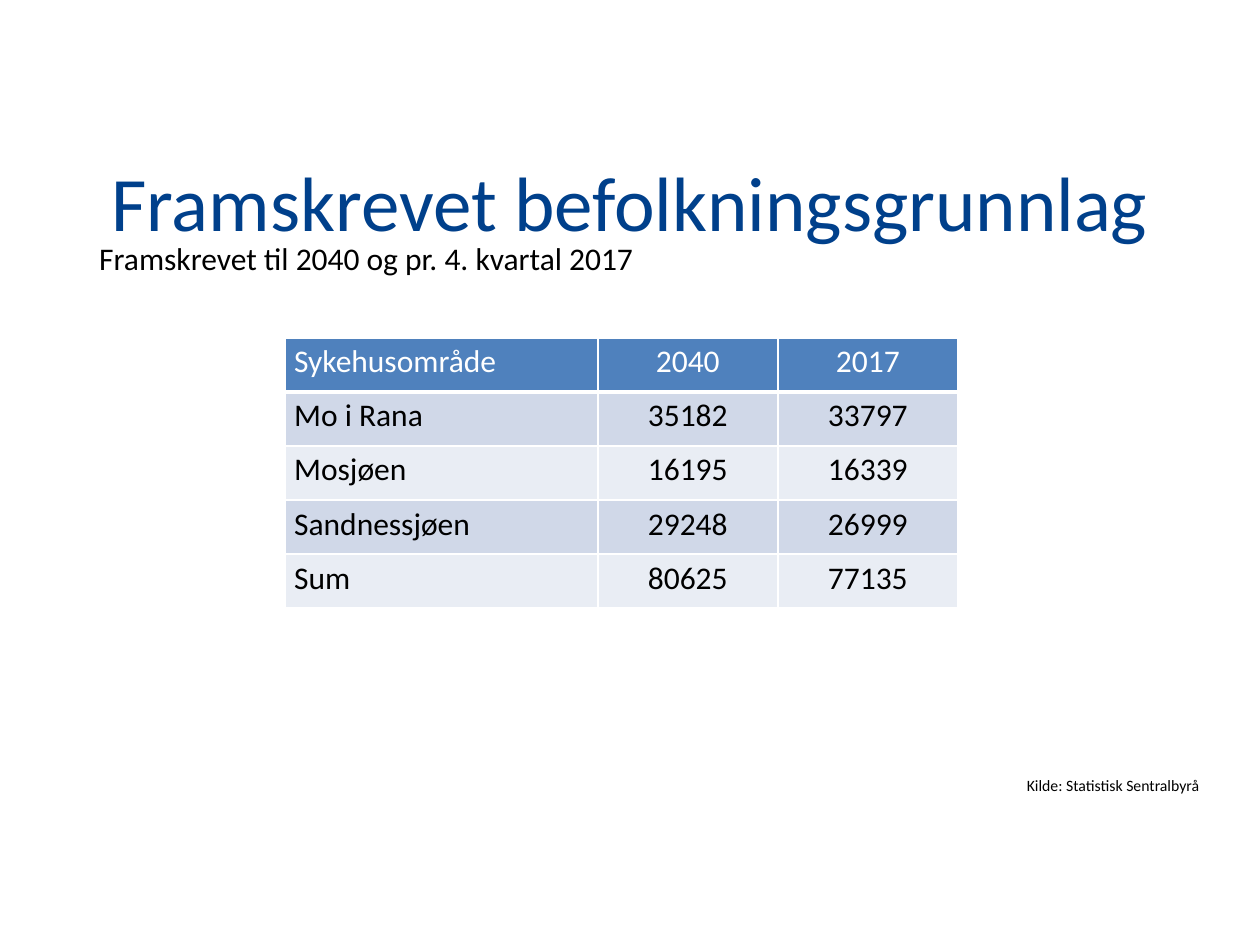
"""Build a slide with a table of projected population per hospital area."""
from pptx import Presentation
from pptx import util as u
from pptx.dml.color import RGBColor
from pptx.enum import text
from pptx.oxml import parse_xml
from pptx.oxml.ns import nsdecls

NAVY = RGBColor(0x00, 0x40, 0x8B)
BLUE = RGBColor(0x4F, 0x81, 0xBD)
BANDS = RGBColor(0xE9, 0xED, 0xF4), RGBColor(0xD0, 0xD8, 0xE8)
WHITE = RGBColor(0xFF, 0xFF, 0xFF)
BLACK = RGBColor(0x00, 0x00, 0x00)
FONT = "Calibri"
ROWS = [
    ("Sykehusområde", "2040", "2017"),
    ("Mo i Rana", "35182", "33797"),
    ("Mosjøen", "16195", "16339"),
    ("Sandnessjøen", "29248", "26999"),
    ("Sum", "80625", "77135"),
]
WIDTHS = 6.3, 3.63, 3.63
HEIGHT = 1.09


def write(frame, words, size, color, align=text.PP_ALIGN.LEFT):
    """Put one formatted run in the first paragraph of a frame."""
    para = frame.paragraphs[0]
    para.alignment = align
    run = para.add_run()
    run.text = words
    font = run.font
    font.name, font.size, font.bold = FONT, u.Pt(size), False
    font.color.rgb = color


def place(shape, left, top, width, height):
    """Set the position and size of a shape in centimetres."""
    shape.left, shape.top = u.Cm(left), u.Cm(top)
    shape.width, shape.height = u.Cm(width), u.Cm(height)


def add_title(slide, words):
    """Move and fill the title placeholder."""
    title = slide.shapes.title
    place(title, 1.75, 3.15, 21.9, 1.78)
    title.text_frame.vertical_anchor = text.MSO_ANCHOR.MIDDLE
    write(title.text_frame, words, 44, NAVY, text.PP_ALIGN.CENTER)


def add_label(slide, words, size, *box):
    """Add a one-line text box that grows with its text."""
    frame = slide.shapes.add_textbox(*map(u.Cm, box)).text_frame
    frame.word_wrap = False
    frame.auto_size = text.MSO_AUTO_SIZE.SHAPE_TO_FIT_TEXT
    write(frame, words, size, BLACK)


def add_edges(cell, low):
    """Draw white cell borders, with the given width below."""
    props = cell._tc.get_or_add_tcPr()
    for side, width in zip("LRTB", (1, 1, 1, low)):
        props.append(parse_xml(
            f'<a:ln{side} {nsdecls("a")} w="{u.Pt(width)}"><a:solidFill>'
            f'<a:srgbClr val="{WHITE}"/></a:solidFill></a:ln{side}>'))


def fill_cell(cell, words, row, col):
    """Write and colour one table cell."""
    head = row == 0
    cell.margin_left = cell.margin_right = u.Cm(0.18)
    cell.margin_top = cell.margin_bottom = u.Cm(0.1)
    add_edges(cell, 3 if head else 1)
    cell.fill.solid()
    cell.fill.fore_color.rgb = BLUE if head else BANDS[row % 2]
    align = text.PP_ALIGN.CENTER if col else text.PP_ALIGN.LEFT
    write(cell.text_frame, words, 18, WHITE if head else BLACK, align)


def add_grid(slide, left, top):
    """Add the population table."""
    box = left, top, sum(WIDTHS), HEIGHT * len(ROWS)
    grid = slide.shapes.add_table(len(ROWS), len(WIDTHS), *map(u.Cm, box)).table
    for col, width in zip(grid.columns, WIDTHS):
        col.width = u.Cm(width)
    for r, row in enumerate(ROWS):
        for c, words in enumerate(row):
            fill_cell(grid.cell(r, c), words, r, c)


def main():
    """Build and save the slide."""
    deck = Presentation()
    deck.slide_width, deck.slide_height = u.Cm(25.4), u.Cm(19.05)
    slide = deck.slides.add_slide(deck.slide_layouts[5])
    add_title(slide, "Framskrevet befolkningsgrunnlag")
    add_grid(slide, 5.75, 6.81)
    add_label(slide, "Kilde: Statistisk Sentralbyrå", 9, 20.45, 15.52, 4.06, 0.64)
    add_label(slide, "Framskrevet til 2040 og pr. 4. kvartal 2017", 18,
              1.75, 4.7, 11.4, 1.02)
    deck.save("out.pptx")


if __name__ == "__main__":
    main()
